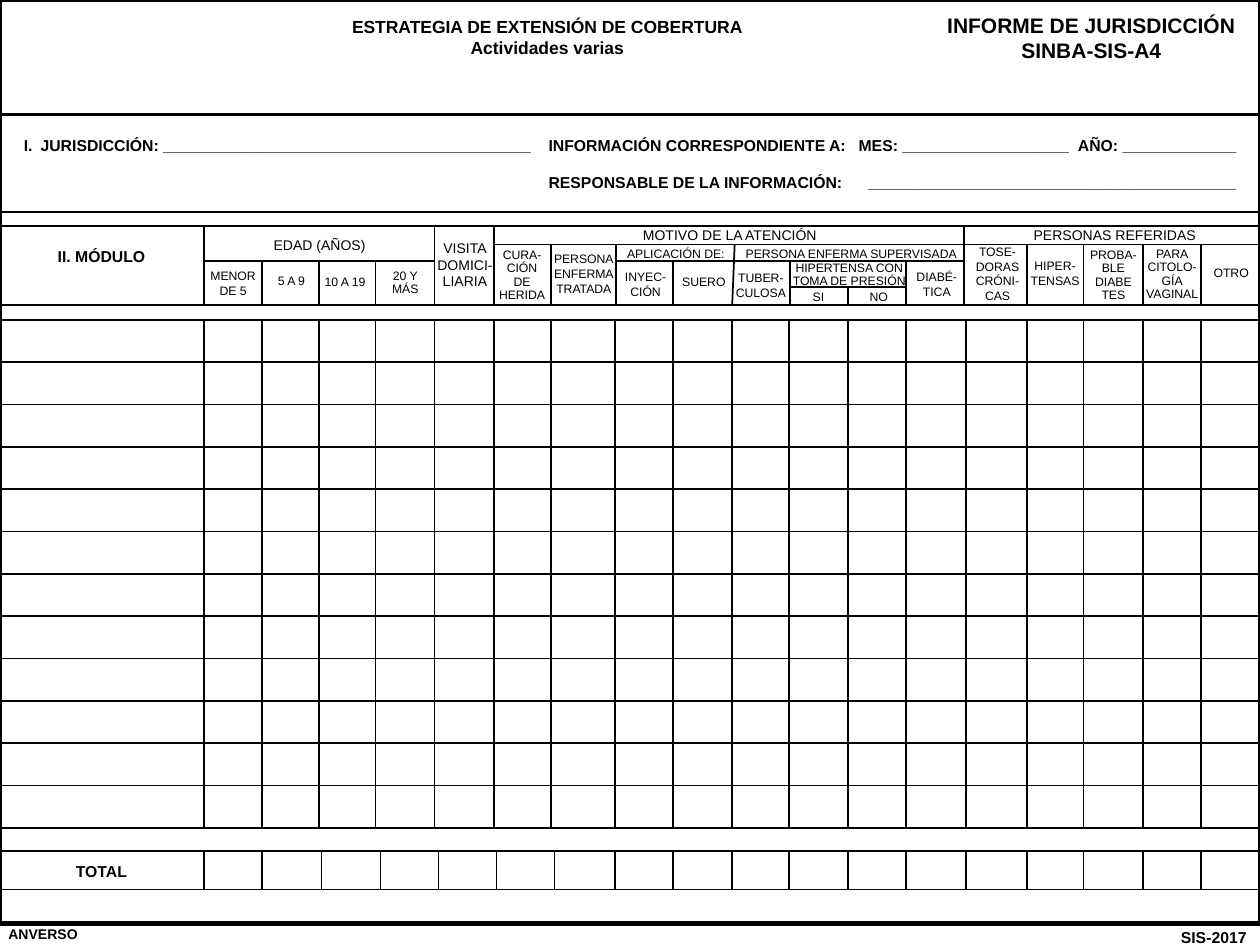
from lxml import etree
from pptx import Presentation
from pptx.dml.color import RGBColor
from pptx.enum.shapes import MSO_CONNECTOR, MSO_SHAPE
from pptx.enum.text import MSO_ANCHOR, MSO_AUTO_SIZE, PP_ALIGN
from pptx.oxml.ns import qn
from pptx.util import Cm, Pt

STRAIGHT = MSO_CONNECTOR.STRAIGHT
RECT = MSO_SHAPE.RECTANGLE
TOP = MSO_ANCHOR.TOP
NO_FIT = MSO_AUTO_SIZE.NONE
LEFT, CENTER, RIGHT = PP_ALIGN.LEFT, PP_ALIGN.CENTER, PP_ALIGN.RIGHT

COLORS = {"ink": "000000"}
FONT = "Arial"
WIDTH, HEIGHT = 25.4, 19.05

COLS = [4.11, 5.28, 6.43, 7.57, 8.76, 9.96, 11.11, 12.4, 13.56,
        14.76, 15.9, 17.09, 18.26, 19.48, 20.7, 21.84, 23.04, 24.21]
TOTAL_COLS = COLS[:2] + [6.48, 7.67, 8.84, 10.01, 11.18] + COLS[7:]
GRID_TOP, GRID_BOTTOM, GRID_ROWS = 6.45, 16.69, 12
TOTAL_TOP, TOTAL_BOTTOM = 17.15, 17.93
HEAD_TOP, HEAD_MID, HEAD_LOW, HEAD_BOTTOM = 4.55, 4.93, 5.26, 6.15

HEAD_RULES = [
    (COLS[5], HEAD_MID, WIDTH, HEAD_MID),
    (COLS[0], HEAD_LOW, COLS[4], HEAD_LOW),
    (COLS[7], HEAD_LOW, 19.46, HEAD_LOW),
    (15.92, 5.79, COLS[12], 5.79),
    (COLS[11], 5.79, COLS[11], HEAD_BOTTOM),
    (14.81, HEAD_MID, 14.76, HEAD_BOTTOM),
]
HEAD_COLS = [
    (HEAD_TOP, [COLS[0], COLS[4], COLS[5], 19.43]),
    (HEAD_MID, [COLS[6], 12.42] + COLS[14:]),
    (HEAD_LOW, COLS[1:4] + [COLS[8], 15.92, COLS[12]]),
]

GROUP_LABELS = [
    (4.11, 4.65, 4.67, 0.58, "EDAD (AÑOS)"),
    (8.56, 4.7, 1.63, 1.27, "VISITA\nDOMICI-\nLIARIA"),
    (10.03, 4.45, 9.37, 0.58, "MOTIVO DE LA ATENCIÓN"),
    (19.53, 4.45, 5.89, 0.58, "PERSONAS REFERIDAS"),
]
COLUMN_LABELS = [
    (3.99, 5.28, 1.42, 0.84, "MENOR\nDE 5"),
    (10.92, 4.95, 1.7, 1.14, "PERSONA\nENFERMA\nTRATADA"),
    (12.37, 4.85, 2.51, 0.56, "APLICACIÓN DE:"),
    (12.34, 5.31, 1.35, 0.84, "INYEC-\nCIÓN"),
    (13.49, 5.41, 1.4, 0.56, "SUERO"),
    (14.76, 4.83, 4.8, 0.56, "PERSONA ENFERMA SUPERVISADA"),
    (14.58, 5.33, 1.52, 0.84, "TUBER-\nCULOSA"),
    (16.13, 5.71, 0.74, 0.56, "SI"),
    (17.27, 5.7, 0.89, 0.56, "NO"),
    (18.21, 5.31, 1.35, 0.86, "DIABÉ-\nTICA"),
    (19.41, 4.8, 1.4, 1.45, "TOSE-\nDORAS\nCRÓNI-\nCAS"),
    (20.52, 5.08, 1.5, 0.84, "HIPER-\nTENSAS"),
    (24.21, 5.23, 1.22, 0.56, "OTRO"),
]
TIGHT_LABELS = [
    (5.33, 5.41, 1.09, 0.51, "5 A 9"),
    (6.27, 5.43, 1.37, 0.51, "10 A 19"),
    (7.65, 5.31, 1.04, 0.79, "20 Y\nMÁS"),
    (9.8, 4.9, 1.45, 1.32, "CURA-\nCIÓN\nDE\nHERIDA"),
    (15.7, 5.16, 2.84, 0.79, "HIPERTENSA CON\nTOMA DE PRESIÓN"),
    (21.72, 4.9, 1.45, 1.32, "PROBA-\nBLE\nDIABE\nTES"),
    (22.83, 4.88, 1.6, 1.32, "PARA\nCITOLO-\nGÍA\nVAGINAL"),
]
BOLD_LABELS = [
    (0, 4.85, 4.09, 0.66, "II. MÓDULO"),
    (0, 17.25, 4.09, 0.64, "TOTAL"),
]
FIELDS = [
    ("I.\tJURISDICCIÓN: __________________________________________"
     "\tINFORMACIÓN CORRESPONDIENTE A:\tMES: ___________________"
     "\tAÑO: _____________", [0.34, 10.58, 16.83, 21.25]),
    ("\tRESPONSABLE DE LA INFORMACIÓN:"
     "\t__________________________________________", [10.58, 17.02]),
]


def rgb(name):
    return RGBColor.from_string(COLORS[name])


def add_line(slide, x1, y1, x2, y2, width=1):
    sp = slide.shapes.add_connector(STRAIGHT, Cm(x1), Cm(y1), Cm(x2), Cm(y2))
    sp.line.color.rgb = rgb("ink")
    sp.line.width = Pt(width)
    etree.SubElement(sp._element.spPr, qn("a:effectLst"))


def add_frame(slide, x, y, w, h, width):
    sp = slide.shapes.add_shape(RECT, Cm(x), Cm(y), Cm(w), Cm(h))
    sp.shadow.inherit = False
    sp.fill.background()
    sp.line.color.rgb = rgb("ink")
    sp.line.width = Pt(width)


def write_text(tf, text, size=7, bold=False, align=CENTER, spacing=None, wrap=False):
    tf.word_wrap = wrap
    tf.auto_size = NO_FIT
    tf.vertical_anchor = TOP
    for i, line in enumerate(text.split("\n")):
        p = tf.paragraphs[0] if i == 0 else tf.add_paragraph()
        p.alignment = align
        p.line_spacing = spacing
        r = p.add_run()
        r.text = line
        r.font.name = FONT
        r.font.size = Pt(size)
        r.font.bold = bold
        r.font.color.rgb = rgb("ink")


def add_text(slide, x, y, w, h, text, **fmt):
    sp = slide.shapes.add_textbox(Cm(x), Cm(y), Cm(w), Cm(h))
    write_text(sp.text_frame, text, **fmt)
    return sp.text_frame


def add_title(slide, x, y, w, h, text, **fmt):
    sp = slide.shapes.title
    sp.left, sp.top, sp.width, sp.height = Cm(x), Cm(y), Cm(w), Cm(h)
    write_text(sp.text_frame, text, **fmt)


def add_labels(slide, labels, **fmt):
    for label in labels:
        add_text(slide, *label, **fmt)


def add_columns(slide, xs, top, bottom):
    for x in xs:
        add_line(slide, x, top, x, bottom)


def set_tabs(p, stops):
    tabs = etree.SubElement(p._p.get_or_add_pPr(), qn("a:tabLst"))
    for stop in stops:
        etree.SubElement(tabs, qn("a:tab"), pos=str(Cm(stop)), algn="l")


def add_fields(slide):
    text = "\n".join(line for line, _ in FIELDS)
    tf = add_text(slide, 0.23, 2.62, 25.32, 1.42, text,
                  size=9, bold=True, align=LEFT, wrap=True)
    for p, (_, stops) in zip(tf.paragraphs, FIELDS):
        set_tabs(p, stops)
    tf.paragraphs[1].space_before = Pt(10.35)


def add_table_head(slide):
    for rule in HEAD_RULES:
        add_line(slide, *rule)
    for top, xs in HEAD_COLS:
        add_columns(slide, xs, top, HEAD_BOTTOM)
    add_labels(slide, GROUP_LABELS, size=8)
    add_labels(slide, COLUMN_LABELS)
    add_labels(slide, TIGHT_LABELS, spacing=0.9)
    add_labels(slide, BOLD_LABELS, size=9, bold=True)


def add_grid(slide):
    step = (GRID_BOTTOM - GRID_TOP) / GRID_ROWS
    rows = [GRID_TOP + i * step for i in range(GRID_ROWS + 1)]
    for y in [4.27, HEAD_TOP, HEAD_BOTTOM, *rows, TOTAL_TOP, TOTAL_BOTTOM]:
        add_line(slide, 0, y, WIDTH, y)
    add_columns(slide, COLS, GRID_TOP, GRID_BOTTOM)
    add_columns(slide, TOTAL_COLS, TOTAL_TOP, TOTAL_BOTTOM)


def main():
    prs = Presentation()
    prs.slide_width, prs.slide_height = Cm(WIDTH), Cm(HEIGHT)
    slide = prs.slides.add_slide(prs.slide_layouts[5])
    add_frame(slide, 0, 0, WIDTH, 18.62, 2.5)
    add_title(slide, 3.18, 0.2, 15.7, 1.09,
              "ESTRATEGIA DE EXTENSIÓN DE COBERTURA\nActividades varias",
              size=10, bold=True)
    add_text(slide, 18.8, 0.13, 6.4, 1.27, "INFORME DE JURISDICCIÓN\nSINBA-SIS-A4",
             size=12, bold=True)
    add_line(slide, 0, 2.31, WIDTH, 2.31, width=2)
    add_fields(slide)
    add_grid(slide)
    add_table_head(slide)
    add_text(slide, -0.08, 18.54, 2.24, 0.58, "ANVERSO",
             size=8, bold=True, align=LEFT, wrap=True)
    add_text(slide, 22.81, 18.57, 2.57, 0.6, "SIS-2017",
             size=9, bold=True, align=RIGHT, wrap=True)
    prs.save("out.pptx")


if __name__ == "__main__":
    main()
